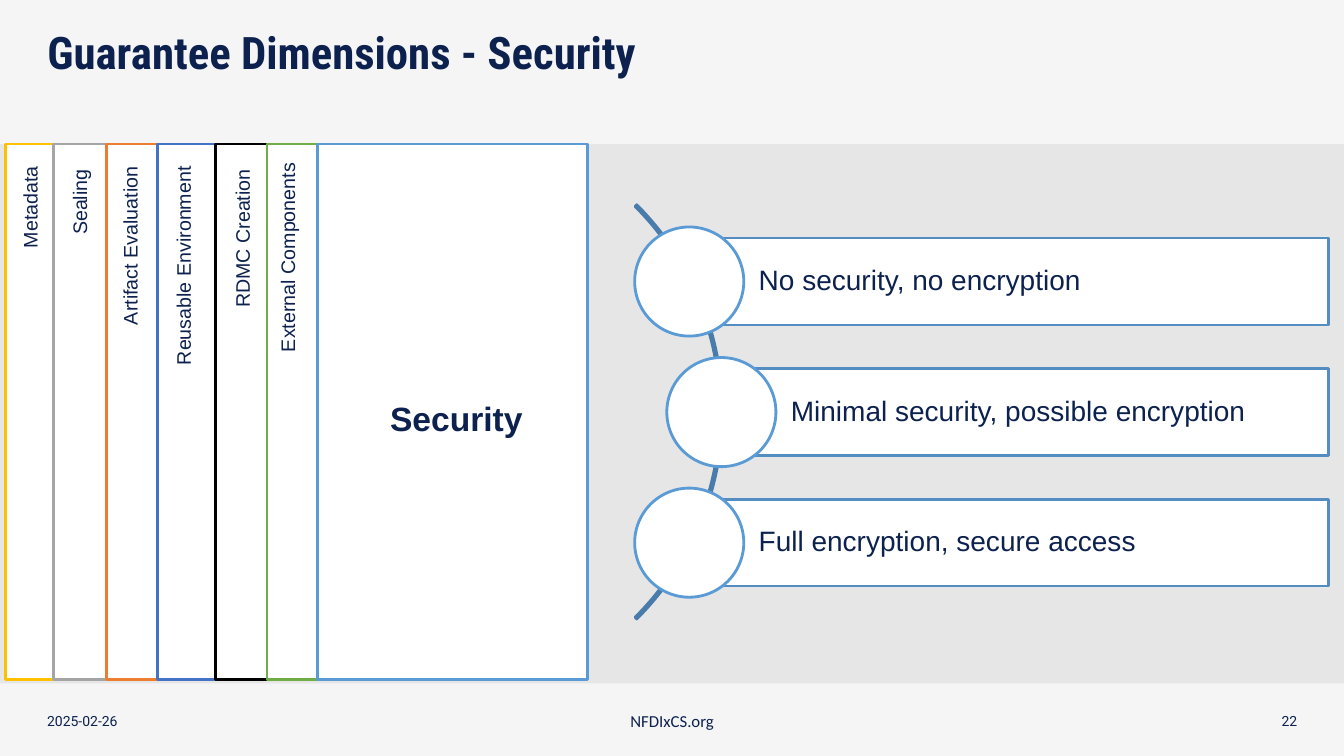
import pptx
import pptx.util
import pptx.dml.color
import pptx.enum.shapes
import pptx.enum.text
import lxml.etree

Cm, Pt = pptx.util.Cm, pptx.util.Pt
SHAPE = pptx.enum.shapes.MSO_SHAPE
ALIGN = pptx.enum.text.PP_ALIGN
ANCHOR = pptx.enum.text.MSO_ANCHOR
rgb = pptx.dml.color.RGBColor.from_string
NAVY = "0D214F"


def add_shape(kind, x, y, w, h, fill=None, line=None):
    sp = slide.shapes.add_shape(kind, Cm(x), Cm(y), Cm(w), Cm(h))
    sp.shadow.inherit = False
    if fill:
        sp.fill.solid()
        sp.fill.fore_color.rgb = rgb(fill)
    else:
        sp.fill.background()
    if line:
        sp.line.color.rgb = rgb(line)
        sp.line.width = Pt(2)
    else:
        sp.line.fill.background()
    return sp


def write(sp, text, size, font="Arial", bold=False, align=ALIGN.LEFT, **frame):
    tf = sp.text_frame
    for name, value in frame.items():
        setattr(tf, name, value)
    p = tf.paragraphs[0]
    p.alignment = align
    r = p.add_run()
    r.text = text
    for name, value in {"size": Pt(size), "name": font, "bold": bold}.items():
        setattr(r.font, name, value)
    r.font.color.rgb = rgb(NAVY)
    return p


prs = pptx.Presentation()
prs.slide_width, prs.slide_height = Cm(33.87), Cm(19.05)
slide = prs.slides.add_slide(prs.slide_layouts[5])
slide.background.fill.solid()
slide.background.fill.fore_color.rgb = rgb("E7E6E6")

# Translucent header and footer bands, behind the title
for top, height in [(0, 3.63), (17.22, 1.83)]:
    sp = add_shape(SHAPE.RECTANGLE, 0, top, 33.87, height, "FFFFFF")
    color = sp.fill._xPr.find(".//" + pptx.oxml.ns.qn("a:srgbClr"))
    lxml.etree.SubElement(color, pptx.oxml.ns.qn("a:alpha"), val="60000")
    slide.shapes._spTree.insert(2, sp._element)

# Title
title = slide.shapes.title
title.left, title.top, title.width, title.height = Cm(0.94), Cm(0.66), Cm(32), Cm(2.97)
p = write(title, "Guarantee Dimensions - Security", 32, "Roboto Condensed", True,
          vertical_anchor=ANCHOR.TOP, word_wrap=True,
          auto_size=pptx.enum.text.MSO_AUTO_SIZE.NONE)
p.line_spacing = 0.9

# Footer
for text, x, w, size, font, align in [
    ("2025-02-26", 0.94, 7.62, 10, "Roboto", ALIGN.LEFT),
    ("NFDIxCS.org", 9.5, 14.88, 12, "Calibri", ALIGN.CENTER),
    ("22", 25.32, 7.62, 10, "Roboto", ALIGN.RIGHT),
]:
    sp = slide.shapes.add_textbox(Cm(x), Cm(17.65), Cm(w), Cm(1.02))
    write(sp, text, size, font, align=align, word_wrap=True, vertical_anchor=ANCHOR.MIDDLE)

# Overlapping dimension cards, the front one being Security
for x, line in [(0.13, "FFC000"), (1.35, "A5A5A5"), (2.69, "ED7D31"), (3.96, "4472C4"),
                (5.44, "000000"), (6.73, "70AD47"), (8, "5B9BD5")]:
    add_shape(SHAPE.RECTANGLE, x, 3.63, 6.81, 13.49, "FFFFFF", line)

# Upright card labels: centre x, centre y, length
LABEL_H = 0.86
for text, cx, cy, length in [
    ("Metadata", 0.76, 5.21, 2.59),
    ("Sealing", 2.01, 5.08, 2.18),
    ("Artifact Evaluation", 3.28, 6.18, 4.52),
    ("Reusable Environment", 4.62, 6.68, 5.54),
    ("RDMC Creation", 6.11, 5.99, 4.04),
    ("External Components", 7.25, 6.48, 5.28),
]:
    sp = slide.shapes.add_textbox(Cm(cx - length / 2), Cm(cy - LABEL_H / 2),
                                  Cm(length), Cm(LABEL_H))
    sp.rotation = 270
    write(sp, text, 14, word_wrap=False)

sp = slide.shapes.add_textbox(Cm(9.58), Cm(9.91), Cm(3.89), Cm(1.27))
write(sp, "Security", 24, bold=True, word_wrap=False)

# Arc behind the security levels
arc = add_shape(SHAPE.BLOCK_ARC, 3.45, 3, 14.76, 14.76, line="497CAB")
for i, value in enumerate([189, 27, 0.004]):
    arc.adjustments[i] = value

# Security levels: a bar with a circle over its left end
BAR_RIGHT, BAR_H, CIRCLE = 33.49, 2.19, 2.75
for i, (text, x) in enumerate([
    ("No security, no encryption", 17.37),
    ("Minimal security, possible encryption", 18.18),
    ("Full encryption, secure access", 17.37),
]):
    y = 6 + 3.29 * i
    bar = add_shape(SHAPE.RECTANGLE, x, y, BAR_RIGHT - x, BAR_H, "FFFFFF", "538DC1")
    p = write(bar, text, 20, word_wrap=True, vertical_anchor=ANCHOR.MIDDLE,
              margin_left=Cm(1.75), margin_right=Cm(0.16),
              margin_top=Cm(0.16), margin_bottom=Cm(0.16))
    p.line_spacing = 0.9
    add_shape(SHAPE.OVAL, x - CIRCLE / 2, y + (BAR_H - CIRCLE) / 2, CIRCLE, CIRCLE,
              "FFFFFF", "5B9BD5")

prs.save("out.pptx")
